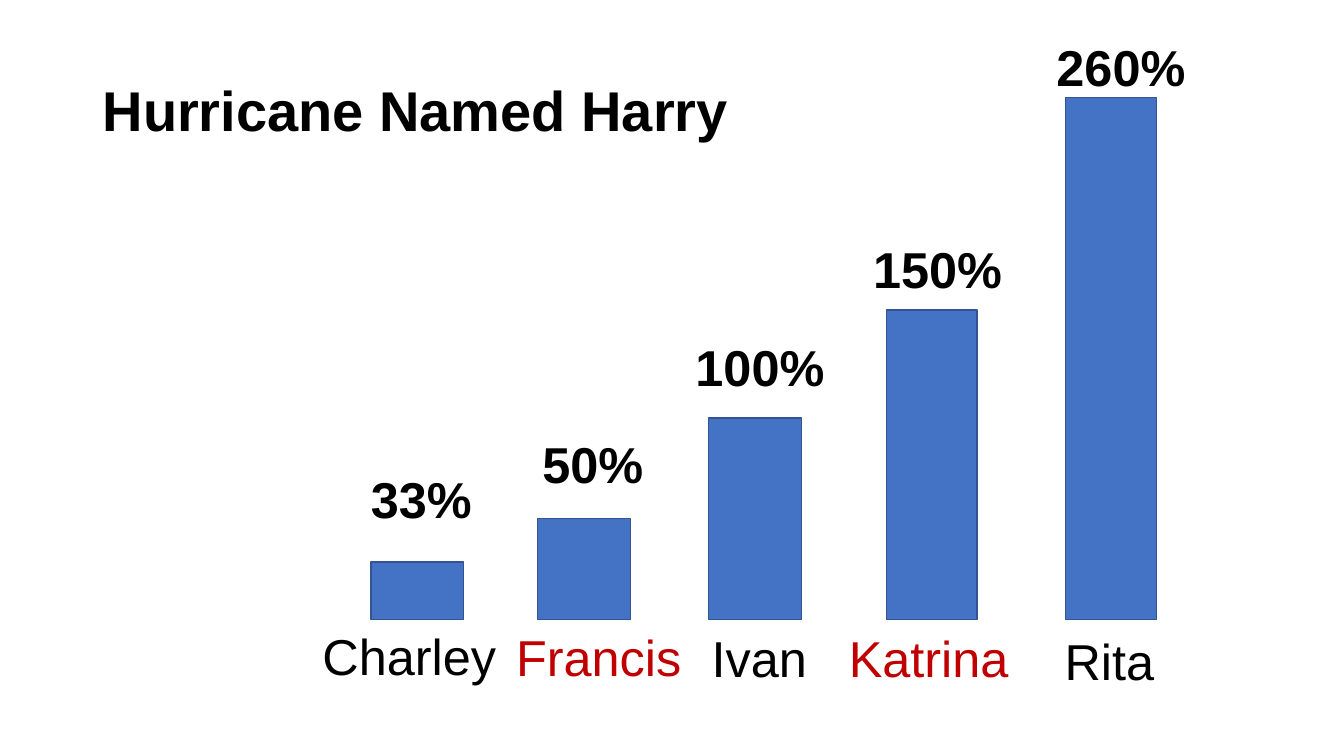
from collections import namedtuple

from pptx import Presentation
from pptx import util as u
from pptx.dml.color import RGBColor
from pptx.enum import shapes, text

W, H = u.Inches(13.33), u.Inches(7.5)
COLORS = {"ink": "000000", "red": "C00000", "bar": "4472C4", "edge": "325491"}
BASELINE = 81.95
TEXT_H = 9.47

Storm = namedtuple(
    "Storm", "name color pct bar_x bar_w bar_h pct_x pct_y name_x name_y name_w")
STORMS = [
    Storm("Charley", "ink", 33, 27.6, 6.9, 7.6, 26.86, 61.33, 23.26, 82, 14.85),
    Storm("Francis", "red", 50, 40, 6.9, 13.33, 39.61, 56.67, 37.66, 82.13, 14.33),
    Storm("Ivan", "ink", 100, 52.74, 6.9, 26.67, 51.01, 43.87, 52.21, 82.27, 8.78),
    Storm("Katrina", "red", 150, 65.94, 6.75, 40.93, 64.22, 30.8, 62.42, 82.27, 13.95),
    Storm("Rita", "ink", 260, 79.29, 6.75, 69.07, 77.87, 4.13, 78.47, 82.67, 8.48),
]


def rgb(name):
    return RGBColor.from_string(COLORS[name])


def place(x, y, w, h):
    return [int(share * side / 100) for share, side in zip((x, y, w, h), (W, H, W, H))]


def add_text(s, content, box, size=36, color="ink", bold=False, wrap=False):
    tf = s.shapes.add_textbox(*place(*box)).text_frame
    tf.word_wrap = wrap
    tf.text = content
    p = tf.paragraphs[0]
    f = p.runs[0].font
    f.name, f.size, f.bold = "Arial", u.Pt(size), bold
    f.color.rgb = rgb(color)
    return tf


def add_title(s, content):
    tf = add_text(s, content, (6.9, 5.33, 86.27, 19.33), size=40, bold=True, wrap=True)
    tf.vertical_anchor = text.MSO_ANCHOR.MIDDLE
    tf.paragraphs[0].line_spacing = 0.9


def add_bar(s, x, w, h):
    sp = s.shapes.add_shape(
        shapes.MSO_SHAPE.RECTANGLE, *place(x, BASELINE - h, w, h))
    sp.shadow.inherit = False
    sp.fill.solid()
    sp.fill.fore_color.rgb = rgb("bar")
    sp.line.color.rgb = rgb("edge")
    sp.line.width = u.Pt(1)


def add_storm(s, storm):
    add_bar(s, storm.bar_x, storm.bar_w, storm.bar_h)
    pct = f"{storm.pct}%"
    pct_w = 3.2 + 2.1 * len(pct)
    add_text(s, pct, (storm.pct_x, storm.pct_y, pct_w, TEXT_H), bold=True)
    add_text(s, storm.name, (storm.name_x, storm.name_y, storm.name_w, TEXT_H),
             color=storm.color)


def main():
    prs = Presentation()
    prs.slide_width, prs.slide_height = W, H
    s = prs.slides.add_slide(prs.slide_layouts[6])
    add_title(s, "Hurricane Named Harry")
    for storm in STORMS:
        add_storm(s, storm)
    prs.save("out.pptx")


if __name__ == "__main__":
    main()
